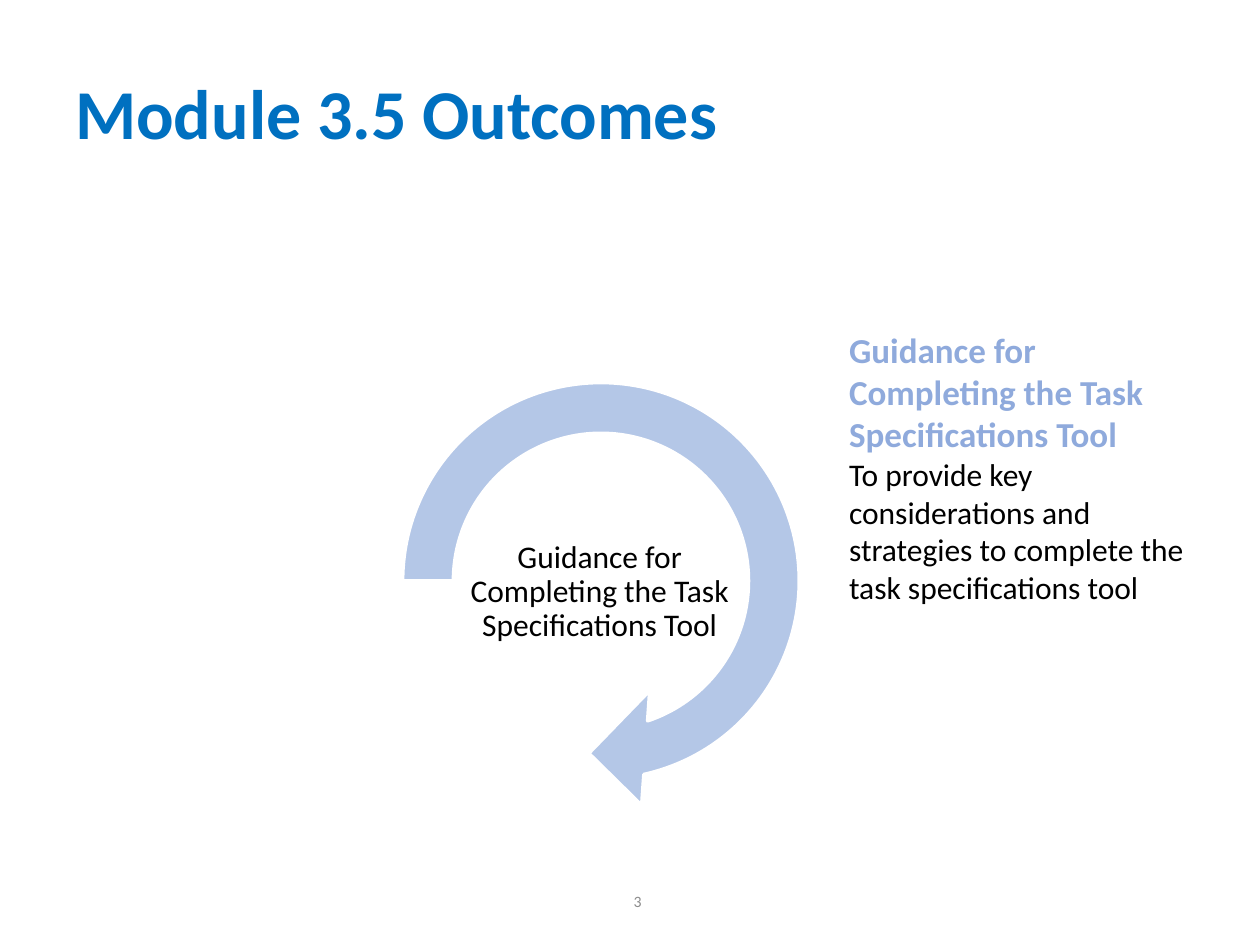
"""Build the Module 3.5 outcomes slide with its circular arrow."""
from pptx import Presentation, util as u
from pptx.dml.color import RGBColor
from pptx.enum import shapes, text

WIDE, HIGH = u.Inches(10), u.Inches(7.5)
FONT = "Calibri"
HUES = {"title": "0070C0", "head": "8FAADC", "body": "000000",
        "page": "8C8C8C", "arc": "B4C7E7", "edge": "FFFFFF"}
TOPIC = "Guidance for Completing the Task Specifications Tool"
GOAL = "To provide key considerations and strategies to complete the task specifications tool"
MID, TOP = text.MSO_ANCHOR.MIDDLE, text.MSO_ANCHOR.TOP
LEFT, CENTER, RIGHT = text.PP_ALIGN.LEFT, text.PP_ALIGN.CENTER, text.PP_ALIGN.RIGHT

ARC = {"at": (29.4, 37.07, 36.6, 48.8), "bends": (0.11, 11.42, 45, 108, 0.125)}
BOXES = [
    {"at": (29.4, 92.67, 22.5, 5.33), "anchor": MID, "align": RIGHT,
     "lines": [("3", 9, "page", False)]},
    {"at": (5, 4, 90, 16.67), "anchor": MID, "align": LEFT, "lead": 0.9,
     "lines": [("Module 3.5 Outcomes", 40, "title", True)]},
    {"at": (35.6, 55.87, 24, 13.6), "anchor": MID, "align": CENTER, "lead": 0.9,
     "inset": 0.01, "lines": [(TOPIC, 18, "body", False)]},
    {"at": (66.4, 34.13, 30.5, 30.93), "anchor": TOP, "align": LEFT,
     "lines": [(TOPIC, 20, "head", True), (GOAL, 18, "body", False)]},
]


def hue(name):
    return RGBColor.from_string(HUES[name])


def place(at):
    return [int(side * share / 100) for side, share in zip((WIDE, HIGH) * 2, at)]


def add_arc(slide):
    arc = slide.shapes.add_shape(shapes.MSO_SHAPE.CIRCULAR_ARROW, *place(ARC["at"]))
    for i, bend in enumerate(ARC["bends"]):
        arc.adjustments[i] = bend
    arc.shadow.inherit = False
    arc.fill.solid()
    arc.fill.fore_color.rgb = hue("arc")
    arc.line.color.rgb = hue("edge")
    arc.line.width = u.Pt(2)


def add_box(slide, box):
    frame = slide.shapes.add_textbox(*place(box["at"])).text_frame
    frame.word_wrap = True
    frame.vertical_anchor = box["anchor"]
    if "inset" in box:
        frame.margin_left = frame.margin_right = u.Inches(box["inset"])
        frame.margin_top = frame.margin_bottom = u.Inches(box["inset"])
    for i, (words, size, tint, bold) in enumerate(box["lines"]):
        para = frame.add_paragraph() if i else frame.paragraphs[0]
        para.alignment = box["align"]
        para.line_spacing = box.get("lead", 1.0)
        run = para.add_run()
        run.text = words
        run.font.name, run.font.size, run.font.bold = FONT, u.Pt(size), bold
        run.font.color.rgb = hue(tint)


def main():
    deck = Presentation()
    deck.slide_width, deck.slide_height = WIDE, HIGH
    slide = deck.slides.add_slide(deck.slide_layouts[6])
    add_arc(slide)
    for box in BOXES:
        add_box(slide, box)
    deck.save("out.pptx")


if __name__ == "__main__":
    main()
